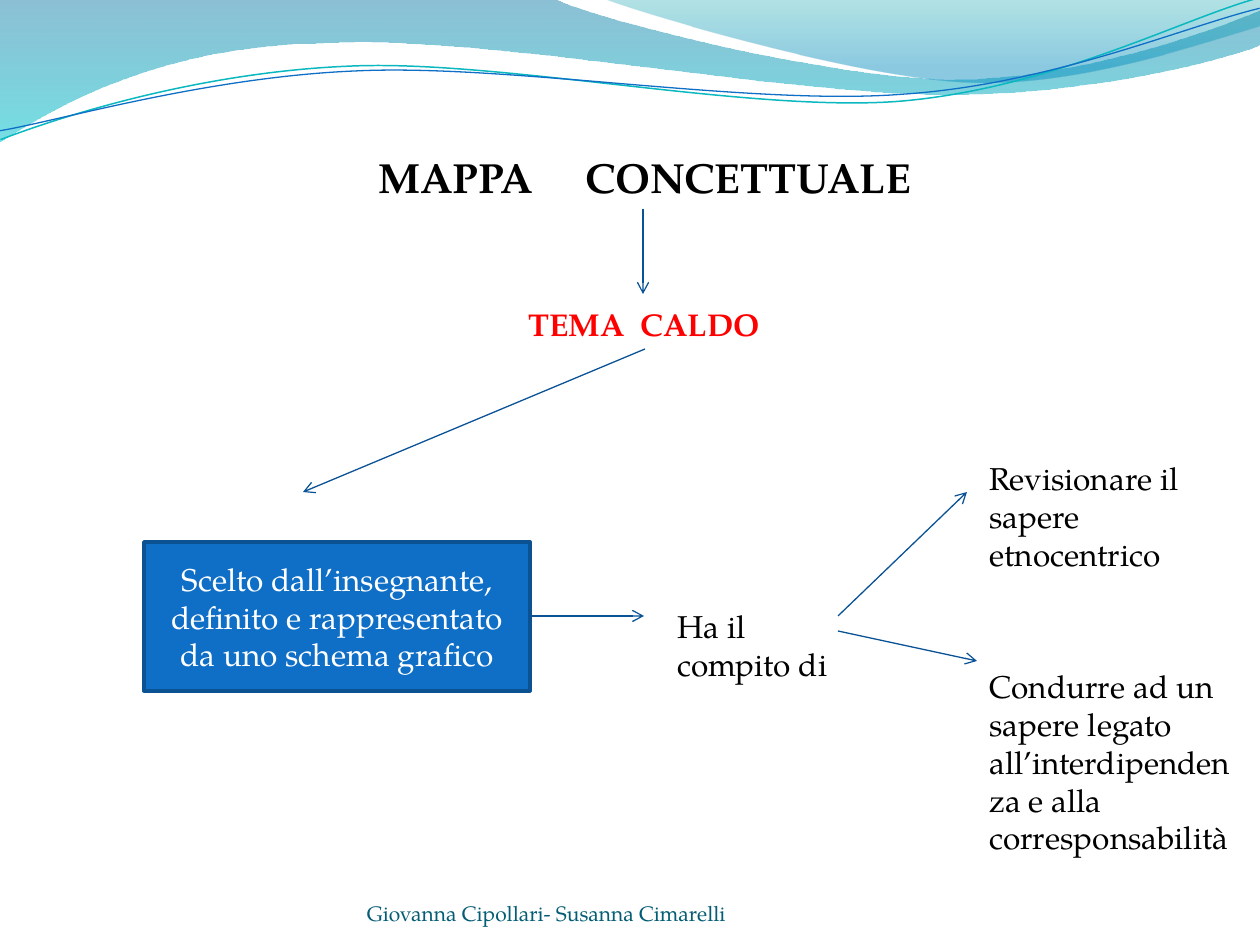
from pptx import Presentation
from pptx.dml.color import RGBColor
from pptx.enum.shapes import MSO_CONNECTOR, MSO_SHAPE
from pptx.enum.text import MSO_ANCHOR, MSO_AUTO_SIZE, PP_ALIGN
from pptx.oxml.ns import qn
from pptx.util import Pt
from lxml.etree import SubElement

SCALE = 914400 / 126
FONT = "TeX Gyre Pagella"
BLACK = RGBColor(0x00, 0x00, 0x00)
WHITE = RGBColor(0xFF, 0xFF, 0xFF)
RED = RGBColor(0xFF, 0x00, 0x00)
BLUE = RGBColor(0x0F, 0x6F, 0xC6)
EDGE = RGBColor(0x0B, 0x52, 0x92)
ARROW = RGBColor(0x09, 0x52, 0x95)
TEAL = RGBColor(0x0A, 0xB8, 0xBF)
FOOT = RGBColor(0x04, 0x5D, 0x75)

# Gradient stops: position, colour, opacity in percent
BAND = [(0, RGBColor(0x00, 0x74, 0xA1), 45), (1, RGBColor(0x00, 0xC6, 0xCF), 55)]
CREST = [(0, RGBColor(0x00, 0xA1, 0xA9), 30), (0.8, RGBColor(0x00, 0x8B, 0xBF), 45)]

# Wave outlines: a pair is a point, six numbers are a cubic curve
BAND_PATH = [(0, 0), (554, -1), (600, 21, 837, 79, 955, 79),
             (1075, 79, 1207, 33, 1260, 11), (1261, 45),
             (1239, 55, 1096, 96, 940, 94), (781, 94, 481, 35, 324, 43),
             (163, 45, 58, 105, -1, 142)]
CREST_PATH = [(604, -1), (641, 14, 859, 78, 969, 82),
              (1079, 87, 1211, 40, 1260, 26), (1260, 0)]
TEAL_PATH = [(-2, 110), (58, 90, 199, 52, 350, 53),
             (499, 53, 745, 118, 896, 114), (1049, 109, 1184, 45, 1260, 28)]
BLUE_PATH = [(-2, 101), (57, 94, 207, 57, 357, 58),
             (509, 58, 750, 112, 902, 107), (1052, 104, 1188, 52, 1262, 38)]
TILT = 357.3


def px(n):
    return round(n * SCALE)


def place(shape, box):
    shape.left, shape.top, shape.width, shape.height = map(px, box)


def write(shape, text, size=18, color=BLACK, bold=False, align=PP_ALIGN.LEFT,
          anchor=MSO_ANCHOR.TOP, inset=None, gap=0):
    """Fill a shape with text; gap widens the spaces between words, in points."""
    frame = shape.text_frame
    frame.word_wrap = True
    frame.auto_size = MSO_AUTO_SIZE.NONE
    frame.vertical_anchor = anchor
    if inset is not None:
        frame.margin_left = frame.margin_right = px(inset)
        frame.margin_top = frame.margin_bottom = px(inset)
    for i, line in enumerate(text.split("\n")):
        para = frame.add_paragraph() if i else frame.paragraphs[0]
        para.alignment = align
        parts = line.replace(" ", "| |").split("|") if gap else [line]
        for part in parts:
            run = para.add_run()
            run.text = part
            run.font.name, run.font.size, run.font.bold = FONT, Pt(size), bold
            run.font.color.rgb = color
            if part == " ":
                run.font._element.set("spc", str(round(gap * 100)))


def label(slide, box, text, **style):
    write(slide.shapes.add_textbox(*map(px, box)), text, **style)


def arrow(slide, x1, y1, x2, y2):
    line = slide.shapes.add_connector(MSO_CONNECTOR.STRAIGHT, *map(px, (x1, y1, x2, y2)))
    line.line.color.rgb = ARROW
    line.line.width = Pt(0.75)
    SubElement(line.line._get_or_add_ln(), qn("a:tailEnd"), type="arrow")
    SubElement(line._element.spPr, qn("a:effectLst"))


def outline(slide, box, steps, close):
    """Draw a freeform through the step ends, then bend its curved segments."""
    left, top = box[:2]
    ends = [(px(left + step[-2]), px(top + step[-1])) for step in steps]
    pen = slide.shapes.build_freeform(*ends[0], scale=1)
    pen.add_line_segments(ends[1:], close=close)
    shape = pen.convert_to_shape()
    shape.shadow.inherit = False
    lines = list(shape._element.spPr.iter(qn("a:lnTo")))
    for line, step in zip(lines, steps[1:]):
        if len(step) == 6:
            line.tag = qn("a:cubicBezTo")
            for i in (2, 0):
                x = px(left + step[i]) - shape.left
                y = px(top + step[i + 1]) - shape.top
                knot = SubElement(line, qn("a:pt"), x=str(x), y=str(y))
                line.insert(0, knot)
    return shape


def waves(slide, box):
    # Shaded bands
    for steps, stops in ((BAND_PATH, BAND), (CREST_PATH, CREST)):
        shape = outline(slide, box, steps, True)
        shape.line.fill.background()
        shape.fill.gradient()
        shape.fill.gradient_angle = 270
        nodes = shape._element.spPr.iter(qn("a:gs"))
        for stop, node, (pos, color, alpha) in zip(shape.fill.gradient_stops, nodes, stops):
            stop.position = pos
            stop.color.rgb = color
            SubElement(node[0], qn("a:alpha"), val=str(alpha * 1000))
    # Thin lines
    for steps, color, width in ((TEAL_PATH, TEAL, 0.85), (BLUE_PATH, BLUE, 0.75)):
        shape = outline(slide, box, steps, False)
        shape.rotation = TILT
        shape.fill.background()
        shape.line.color.rgb = color
        shape.line.width = Pt(width)


def heading(slide, box):
    left, top, width, _ = box
    title = slide.shapes.title
    place(title, (left, top, width, 63))
    write(title, "MAPPA CONCETTUALE", size=24, bold=True, align=PP_ALIGN.CENTER, gap=24)
    arrow(slide, left + 321, top + 64, left + 321, top + 149)
    label(slide, (left + 194, top + 154, 258, 50), "TEMA CALDO",
          color=RED, bold=True, gap=4.5)


def concept(slide, box):
    left, top, _, _ = box
    # Theme to its definition
    arrow(slide, left + 501, top, left + 159, top + 143)
    card = slide.shapes.add_shape(
        MSO_SHAPE.RECTANGLE, *map(px, (left, top + 193, 386, 149)))
    card.shadow.inherit = False
    card.fill.solid()
    card.fill.fore_color.rgb = BLUE
    card.line.color.rgb = EDGE
    card.line.width = Pt(2)
    write(card, "Scelto dall’insegnante, definito e rappresentato da uno schema grafico",
          color=WHITE, align=PP_ALIGN.CENTER, anchor=MSO_ANCHOR.MIDDLE)
    # Task
    arrow(slide, left + 386, top + 267, left + 500, top + 267)
    label(slide, (left + 521, top + 252, 198, 89), "Ha il compito di")
    # Two aims
    arrow(slide, left + 694, top + 267, left + 823, top + 143)
    label(slide, (left + 833, top + 104, 258, 127), "Revisionare il sapere etnocentrico")
    arrow(slide, left + 694, top + 282, left + 833, top + 312)
    label(slide, (left + 833, top + 312, 282, 204),
          "Condurre ad un sapere legato all’interdipenden\nza e alla corresponsabilità")


def footer(slide, box):
    label(slide, box, "Giovanna Cipollari- Susanna Cimarelli", size=12,
          color=FOOT, anchor=MSO_ANCHOR.BOTTOM, inset=0)


def main():
    deck = Presentation()
    deck.slide_width, deck.slide_height = px(1260), px(945)
    slide = deck.slides.add_slide(deck.slide_layouts[5])
    waves(slide, (0, 0, 1260, 142))
    heading(slide, (322, 145, 645, 204))
    concept(slide, (144, 349, 1116, 516))
    footer(slide, (367, 876, 462, 50))
    deck.save("out.pptx")


if __name__ == "__main__":
    main()
